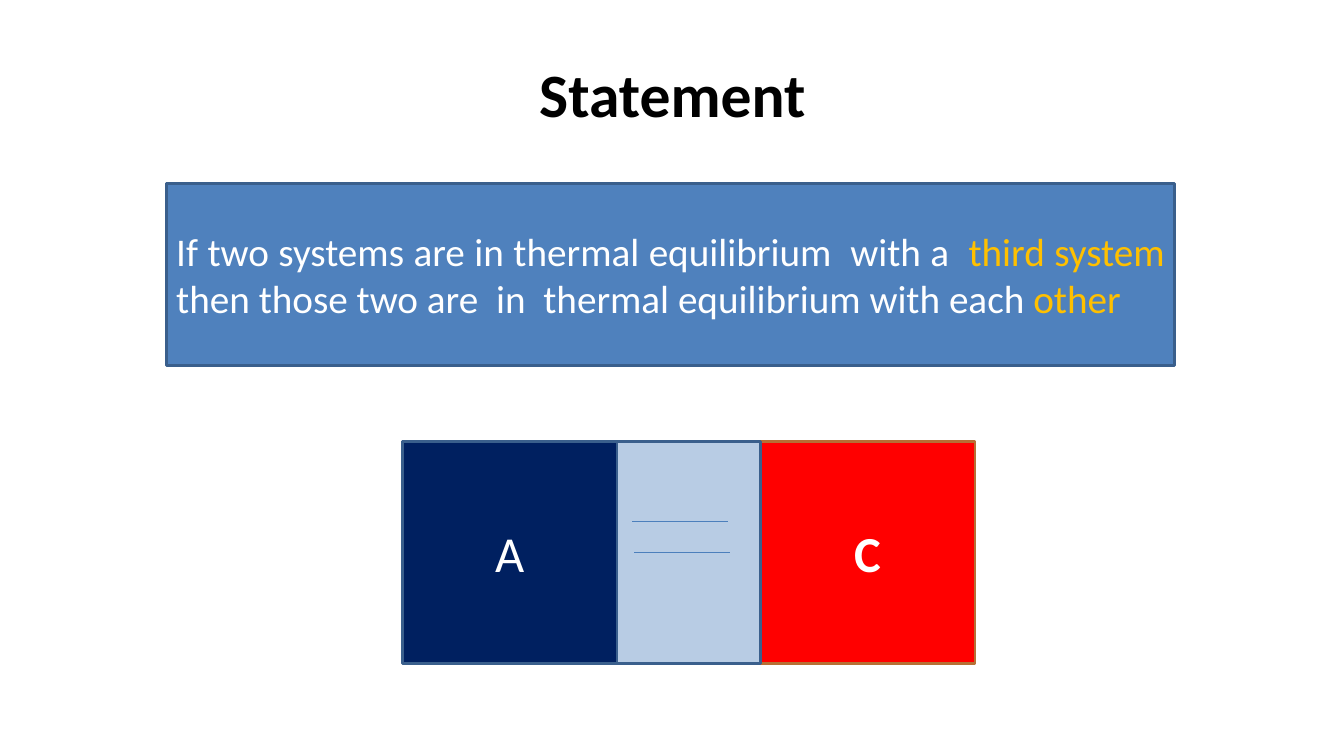
from lxml.etree import SubElement
from pptx import Presentation
from pptx.dml.color import RGBColor
from pptx.enum.shapes import MSO_CONNECTOR as Conn, MSO_SHAPE as Shape
from pptx.enum.text import MSO_ANCHOR as Anchor, PP_ALIGN as Align
from pptx.oxml.ns import qn
from pptx.util import Inches, Pt


def color(code):
    return RGBColor.from_string(code)


def box(left, top, width, height, fill, edge, size, align, runs, bold=False):
    rect = slide.shapes.add_shape(
        Shape.RECTANGLE, Inches(left), Inches(top), Inches(width), Inches(height))
    rect.shadow.inherit = False
    rect.fill.solid()
    rect.fill.fore_color.rgb = color(fill)
    rect.line.color.rgb = color(edge)
    rect.line.width = Pt(2)
    frame = rect.text_frame
    frame.word_wrap = True
    frame.vertical_anchor = Anchor.MIDDLE
    para = frame.paragraphs[0]
    para.alignment = align
    para.font.name = "Calibri"
    para.font.size = Pt(size)
    para.font.bold = bold
    for words, ink in runs:
        run = para.add_run()
        run.text = words
        run.font.color.rgb = color(ink)
    return rect


WHITE, GOLD, BLUE, EDGE = "FFFFFF", "FFC000", "4F81BD", "3A5F8C"

deck = Presentation()
deck.slide_width, deck.slide_height = Inches(13.33), Inches(7.5)
slide = deck.slides.add_slide(deck.slide_layouts[5])

title = slide.shapes.title
title.left, title.top = Inches(0.67), Inches(0.3)
title.width, title.height = Inches(12), Inches(1.25)
title.text_frame.text = "Statement"
title.text_frame.vertical_anchor = Anchor.MIDDLE
head = title.text_frame.paragraphs[0]
head.alignment = Align.CENTER
head.font.name = "Calibri"
head.font.size = Pt(44)
head.font.bold = True
head.font.color.rgb = color("000000")

box(1.65, 1.82, 10, 1.81, BLUE, EDGE, 28, Align.JUSTIFY, [
    ("If two systems are in thermal equilibrium  with a  ", WHITE),
    ("third system ", GOLD),
    ("then those two are  in  thermal equilibrium with each ", WHITE),
    ("other ", GOLD)])

left, top, side, gap, tall = 3.99, 4.38, 2.13, 1.42, 2.2
wall = left + side
box(left, top, side, tall, "002060", EDGE, 36, Align.CENTER, [("A", WHITE)])

for x, y in [(6.27, 5.17), (6.29, 5.48)]:
    line = slide.shapes.add_connector(
        Conn.STRAIGHT, Inches(x), Inches(y), Inches(x + 0.95), Inches(y))
    line.line.color.rgb = color("4B7EBC")
    line.line.width = Pt(0.75)
    SubElement(line._element.spPr, qn("a:effectLst"))

box(wall + gap, top, side, tall, "FF0000", "B76F34", 36, Align.CENTER,
    [("C", WHITE)], True)

pane = box(wall, top, gap, tall, BLUE, EDGE, 18, Align.CENTER, [])
tint = pane._element.spPr.find(qn("a:solidFill"))[0]
SubElement(tint, qn("a:alpha"), val="40000")

deck.save("out.pptx")
